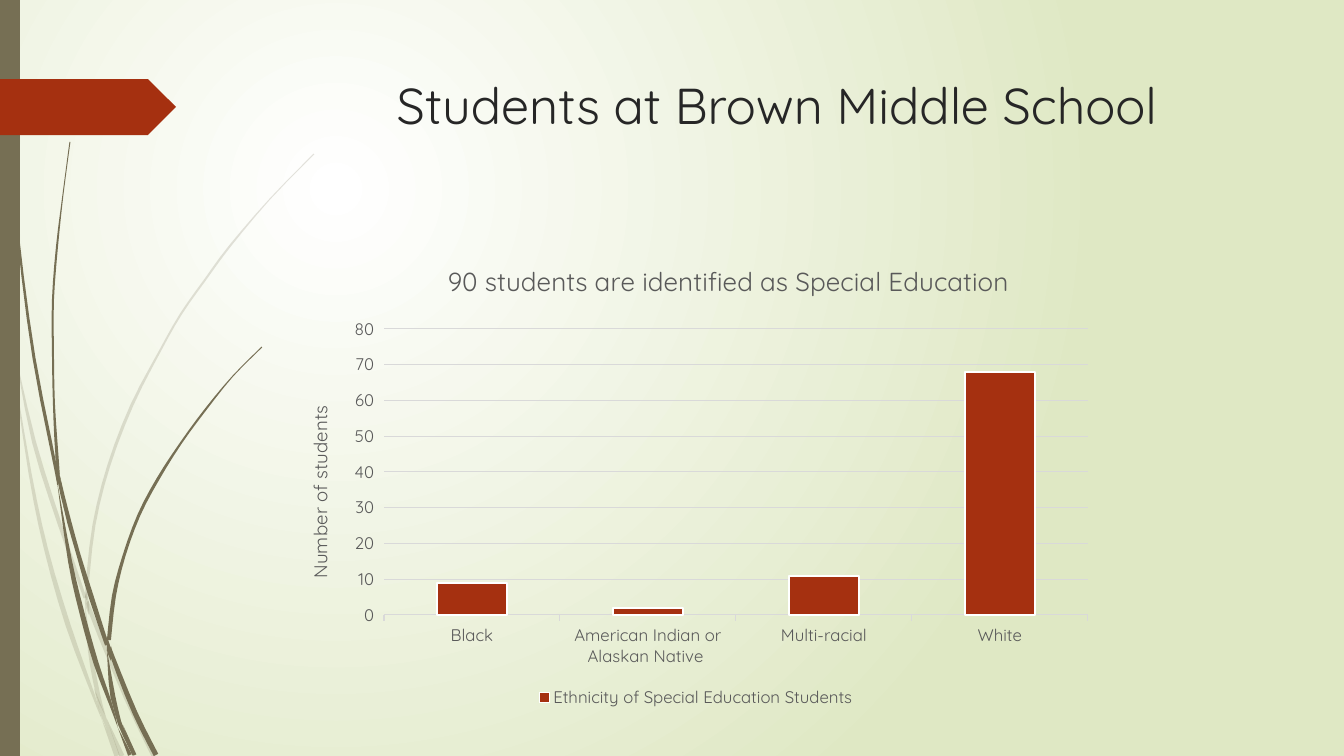
import math
import lxml.etree
import pptx
import pptx.chart.data
import pptx.dml.color
import pptx.enum.chart
import pptx.enum.shapes
import pptx.enum.text
import pptx.oxml.ns
import pptx.util

SCALE = 914400 / 100.8
THEME = {
    "stem": "766F54", "arrow": "A53010", "ink": "262626", "label": "595959",
    "grid": "D9D9D9", "glow": "FFFFFF", "field": "DFE8C4", "font": "Quicksand",
    "head": 36, "title": 18.6, "axis": 13.3, "small": 12,
}
PALE = [
    [(0, 292, 4), (5, 317, 4), (11, 353, 0)],
    [(14, 348, 0), (34, 442, 4), (60, 525, 4), (85, 598, 3)],
    [(89, 601, 0), (91, 613, 4), (126, 698, 4), (154, 756, 5)],
    [(106, 717, 0), (122, 756, 5)],
    [(11, 353, 0), (30, 473, 3), (46, 549, 4), (68, 625, 5), (93, 694, 3), (102, 720, 0)],
    [(85, 604, 0), (90, 651, 4), (98, 694, 4), (106, 717, 0)],
    [(314, 154, 1), (270, 199, 1), (230, 246, 2), (205, 280, 2), (181, 314, 2), (160, 351, 2),
     (132, 405, 3), (109, 465, 3), (94, 525, 3), (87, 588, 3), (87, 600, 1)],
    [(102, 720, 0), (117, 756, 5)],
    [(86, 591, 0), (87, 603, 4), (89, 615, 0)],
    [(94, 688, 0), (104, 718, 4), (120, 756, 0)],
]
DARK = [
    [(3, 0, 1), (8, 110, 1), (18, 235, 2), (34, 358, 3), (56, 470, 3), (57, 485, 0)],
    [(60, 476, 0), (66, 509, 4), (78, 553, 4), (91, 596, 5), (107, 645, 4)],
    [(111, 646, 0), (113, 658, 4), (135, 713, 5), (156, 755, 5)],
    [(57, 481, 0), (70, 561, 4), (82, 613, 5), (96, 663, 5), (111, 705, 3), (118, 728, 0)],
    [(70, 142, 1), (63, 195, 1), (57, 247, 2), (53, 300, 2), (53, 352, 2),
     (54, 404, 2), (57, 455, 3), (60, 476, 0)],
    [(123, 725, 0), (135, 755, 3)],
    [(55, 453, 0), (60, 485, 3), (64, 509, 0)],
    [(262, 347, 1), (233, 376, 1), (206, 409, 2), (181, 443, 2), (158, 479, 3),
     (139, 515, 3), (124, 556, 3), (114, 596, 4), (109, 640, 4)],
    [(118, 728, 0), (130, 755, 4)],
    [(107, 650, 0), (113, 697, 5), (122, 725, 0)],
    [(107, 636, 0), (109, 650, 4), (111, 661, 0)],
    [(111, 697, 0), (120, 724, 4), (134, 755, 3)],
]


def px(size):
    return pptx.util.Emu(round(size * SCALE))


def tint(name):
    return pptx.dml.color.RGBColor.from_string(THEME[name])


def apply(item, form):
    for name, value in form.items():
        setattr(item, name, value)


def style(font, size, color):
    apply(font, {"name": THEME["font"], "size": pptx.util.Pt(THEME[size]), "bold": False})
    font.color.rgb = tint(color)


def paint(shape, color, alpha=100):
    shape.shadow.inherit = False
    shape.fill.solid()
    shape.fill.fore_color.rgb = tint(color)
    shape.line.fill.background()
    if alpha < 100:
        tone = shape._element.spPr.find(".//" + pptx.oxml.ns.qn("a:srgbClr"))
        lxml.etree.SubElement(tone, pptx.oxml.ns.qn("a:alpha"), val=str(alpha * 1000))


def backdrop(slide):
    fill = slide.background.fill
    fill.gradient()
    for stop, color, place in zip(fill.gradient_stops, ("glow", "field"), (0, 1)):
        stop.color.rgb = tint(color)
        stop.position = place
    grad = slide._element.find(".//" + pptx.oxml.ns.qn("a:gradFill"))
    line = grad.find(pptx.oxml.ns.qn("a:lin"))
    round_fill = lxml.etree.Element(pptx.oxml.ns.qn("a:path"), path="circle")
    lxml.etree.SubElement(round_fill, pptx.oxml.ns.qn("a:fillToRect"),
                          l="50000", t="50000", r="100000", b="100000")
    grad.replace(line, round_fill)


def smooth(knots, steps=3):
    ends = [knots[0], *knots, knots[-1]]
    curve = []
    for quad in zip(ends, ends[1:], ends[2:], ends[3:]):
        for step in range(steps):
            t = step / steps
            curve.append([
                b + t * (c - a + t * (2 * a - 5 * b + 4 * c - d + t * (3 * b - a - 3 * c + d))) / 2
                for a, b, c, d in zip(*quad)])
    return curve + [knots[-1]]


def stalk(shapes, knots, alpha):
    curve = smooth(knots)
    left, right = [], []
    for i, (x, y, wide) in enumerate(curve):
        back, front = curve[max(i - 1, 0)], curve[min(i + 1, len(curve) - 1)]
        turn = math.atan2(front[1] - back[1], front[0] - back[0])
        dx, dy = wide / 2 * math.sin(turn), wide / 2 * math.cos(turn)
        left.append((px(x - dx), px(y + dy)))
        right.append((px(x + dx), px(y - dy)))
    edge = left + right[::-1]
    pen = shapes.build_freeform(*edge[0])
    pen.add_line_segments(edge[1:])
    paint(pen.convert_to_shape(), "stem", alpha)


def border(slide, x, y, w, h):
    for stems, alpha in ((PALE, 20), (DARK, 100)):
        group = slide.shapes.add_group_shape()
        for knots in stems:
            stalk(group.shapes, knots, alpha)
    kinds = pptx.enum.shapes.MSO_SHAPE
    for kind, top, wide, high, color in (
            (kinds.RECTANGLE, 0, 20, h, "stem"), (kinds.PENTAGON, 79, w, 56, "arrow")):
        paint(slide.shapes.add_shape(kind, px(x), px(y + top), px(wide), px(high)), color)


def heading(slide, x, y, w, h):
    frame = slide.shapes.add_textbox(px(x), px(y), px(w), px(h)).text_frame
    apply(frame, {"word_wrap": True, "text": "Students at Brown Middle School"})
    para = frame.paragraphs[0]
    para.alignment = pptx.enum.text.PP_ALIGN.CENTER
    style(para.runs[0].font, "head", "ink")


def place(node, index, **spots):
    tag = pptx.oxml.ns.qn
    for old in node.findall(tag("c:layout")):
        node.remove(old)
    layout = lxml.etree.Element(tag("c:layout"))
    manual = lxml.etree.SubElement(layout, tag("c:manualLayout"))
    if "w" in spots:
        lxml.etree.SubElement(manual, tag("c:layoutTarget"), val="inner")
    for side in "xy":
        lxml.etree.SubElement(manual, tag(f"c:{side}Mode"), val="edge")
    for side, value in spots.items():
        lxml.etree.SubElement(manual, tag(f"c:{side}"), val=str(round(value, 4)))
    node.insert(index, layout)


def label(title, text, size):
    frame = title.text_frame
    frame.text = text
    style(frame.paragraphs[0].runs[0].font, size, "label")


def graph(slide, x, y, w, h):
    enum = pptx.enum.chart
    data = pptx.chart.data.CategoryChartData()
    data.categories = ["Black", "American Indian or Alaskan Native ", "Multi-racial", "White"]
    data.add_series("Ethnicity of Special Education Students", (9, 2, 11, 68))
    chart = slide.shapes.add_chart(
        enum.XL_CHART_TYPE.COLUMN_CLUSTERED, px(x), px(y), px(w), px(h), data).chart
    style(chart.font, "small", "label")
    apply(chart, {"has_title": True, "has_legend": True})
    apply(chart.legend, {"position": enum.XL_LEGEND_POSITION.BOTTOM, "include_in_layout": False})
    style(chart.legend.font, "small", "label")
    cat, val = chart.category_axis, chart.value_axis
    tick = enum.XL_TICK_MARK.OUTSIDE
    apply(cat, {"major_tick_mark": tick, "has_major_gridlines": False})
    apply(val, {"major_tick_mark": tick, "has_major_gridlines": True, "has_title": True,
                "minimum_scale": 0, "maximum_scale": 80, "major_unit": 10})
    for axis in (cat, val):
        style(axis.tick_labels.font, "small", "label")
    for line in (cat.format.line, val.major_gridlines.format.line):
        line.color.rgb = tint("grid")
        line.width = pptx.util.Pt(0.75)
    val.format.line.fill.background()
    label(chart.chart_title, "90 students are identified as Special Education", "title")
    label(val.axis_title, "Number of students", "axis")
    place(chart.chart_title._element, 1, x=157 / w, y=6 / h)
    place(val.axis_title._element, 1, x=17 / w, y=151 / h)
    place(chart._chartSpace.chart.plotArea, 0, x=98 / w, y=78 / h, w=704 / w, h=286 / h)
    plot = chart.plots[0]
    apply(plot, {"gap_width": 150, "vary_by_categories": False})
    bars = plot.series[0].format
    bars.fill.solid()
    bars.fill.fore_color.rgb = tint("arrow")
    bars.line.color.rgb = tint("glow")
    bars.line.width = pptx.util.Pt(1.5)


def main():
    deck = pptx.Presentation()
    apply(deck, {"slide_width": px(1344), "slide_height": px(756)})
    slide = deck.slides.add_slide(deck.slide_layouts[6])
    backdrop(slide)
    border(slide, 0, 0, 176, 756)
    heading(slide, 286, 69, 982, 141)
    graph(slide, 286, 251, 820, 461)
    deck.save("out.pptx")


if __name__ == "__main__":
    main()
